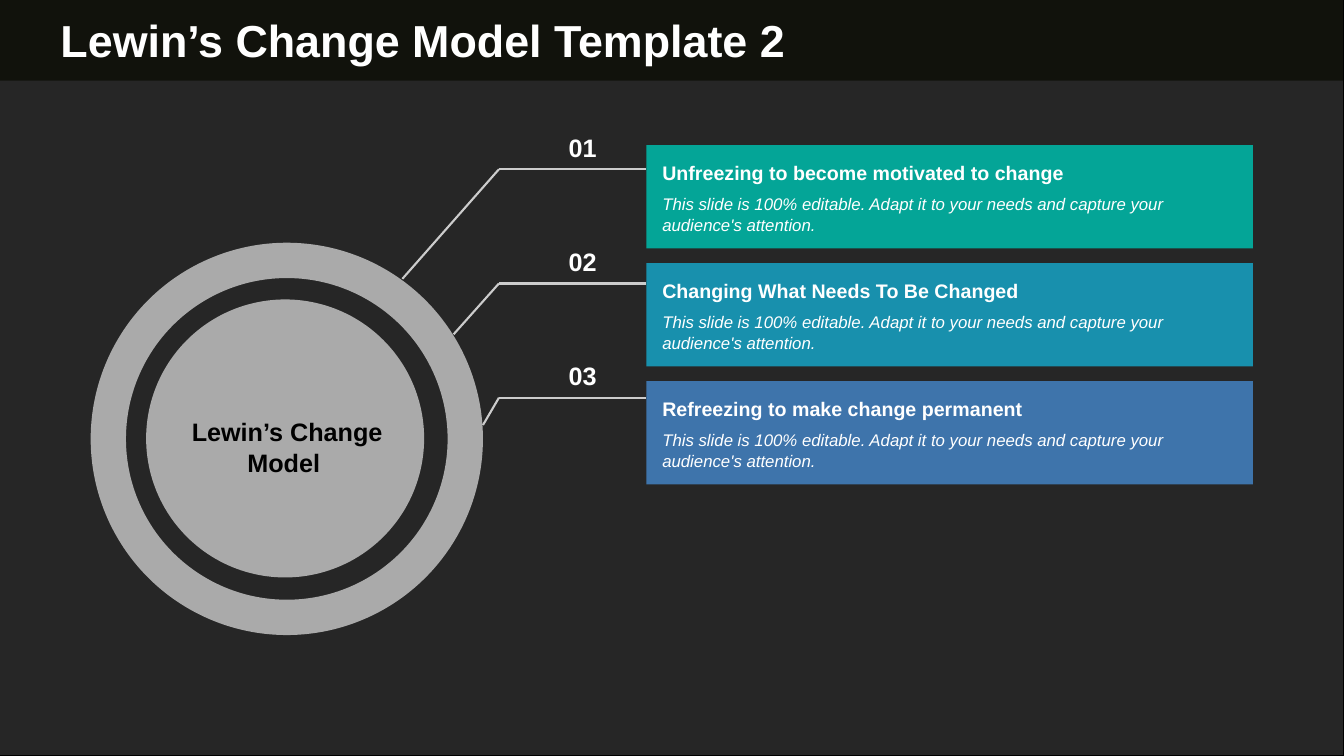
from dataclasses import dataclass

from lxml import etree
from pptx import Presentation
from pptx.dml.color import RGBColor
from pptx.enum.shapes import MSO_CONNECTOR, MSO_SHAPE
from pptx.enum.text import MSO_ANCHOR, MSO_AUTO_SIZE, PP_ALIGN
from pptx.oxml.ns import qn
from pptx.shapes.base import BaseShape
from pptx.slide import Slide
from pptx.text.text import TextFrame
from pptx.util import Inches, Pt

LINE = MSO_CONNECTOR.STRAIGHT
RECT, DONUT, OVAL = MSO_SHAPE.RECTANGLE, MSO_SHAPE.DONUT, MSO_SHAPE.OVAL
TOP, MID = MSO_ANCHOR.TOP, MSO_ANCHOR.MIDDLE
LEFT, CENTER = PP_ALIGN.LEFT, PP_ALIGN.CENTER
NO_FIT = MSO_AUTO_SIZE.NONE

COLS, ROWS = 160, 90
WIDE, HIGH = Inches(13.33), Inches(7.5)
WHITE, BLACK, GREY = "FFFFFF", "000000", "CCCCCC"
NOTE = ("This slide is 100% editable. Adapt it to your needs "
        "and capture your audience's attention.")


@dataclass(frozen=True)
class Area:
    col: float
    row: float
    wide: float
    high: float

    def place(self) -> tuple[int, int, int, int]:
        return across(self.col), down(self.row), across(self.wide), down(self.high)


@dataclass(frozen=True)
class Step:
    head: str
    fill: str
    end_col: float
    end_row: float


STEPS = [
    Step("Unfreezing to become motivated to change", "04A597", 47.9, 33.2),
    Step("Changing What Needs To Be Changed", "1890AD", 54, 39.8),
    Step("Refreezing to make change permanent", "3E74AB", 57.5, 50.6),
]
CARD = Area(76.95, 17.28, 72.2, 12.3)
CARD_GAP = 14.05
RAIL_ROW, RAIL_GAP = 20.15, 13.6
BEND = 59.4


def across(cols: float) -> int:
    return round(WIDE * cols / COLS)


def down(rows: float) -> int:
    return round(HIGH * rows / ROWS)


def color(code: str) -> RGBColor:
    return RGBColor.from_string(code)


def add_form(slide: Slide, kind: MSO_SHAPE, area: Area, fill: str,
             share: int = 100) -> BaseShape:
    form = slide.shapes.add_shape(kind, *area.place())
    form.shadow.inherit = False
    form.fill.solid()
    form.fill.fore_color.rgb = color(fill)
    form.line.fill.background()
    if share < 100:
        tint = form.element.spPr.find(qn("a:solidFill"))[0]
        etree.SubElement(tint, qn("a:alpha")).set("val", str(share * 1000))
    return form


def set_text(frame: TextFrame, text: str, size: int, ink: str = WHITE,
             bold: bool = True, align: PP_ALIGN = LEFT,
             anchor: MSO_ANCHOR = MID) -> None:
    frame.text = text
    frame.word_wrap = True
    frame.auto_size = NO_FIT
    frame.vertical_anchor = anchor
    line = frame.paragraphs[0]
    line.alignment = align
    font = line.runs[0].font
    font.name, font.size = "Arial", Pt(size)
    font.bold, font.italic = bold, not bold
    font.color.rgb = color(ink)


def add_text(slide: Slide, area: Area, text: str, size: int, ink: str = WHITE,
             bold: bool = True, align: PP_ALIGN = LEFT,
             anchor: MSO_ANCHOR = MID) -> None:
    frame = slide.shapes.add_textbox(*area.place()).text_frame
    frame.margin_left = frame.margin_right = Inches(0.07)
    frame.margin_top = frame.margin_bottom = Inches(0.04)
    set_text(frame, text, size, ink, bold, align, anchor)


def add_line(slide: Slide, col: float, row: float, end_col: float,
             end_row: float) -> None:
    line = slide.shapes.add_connector(
        LINE, across(col), down(row), across(end_col), down(end_row))
    line.line.color.rgb = color(GREY)
    line.line.width = Pt(1.5)
    etree.SubElement(line.element.spPr, qn("a:effectLst"))


def add_back(slide: Slide) -> None:
    add_form(slide, RECT, Area(0, 0, COLS, 9.6), "767C52")
    shade = add_form(slide, RECT, Area(0, 0, COLS, ROWS), BLACK, 85)
    shade.line.color.rgb = color(BLACK)
    shade.line.width = Pt(0.75)


def add_title(slide: Slide, text: str) -> None:
    title = slide.shapes.title
    title.element.getparent().append(title.element)
    title.left, title.top, title.width, title.height = Area(6, 0, 131.6, 9.4).place()
    set_text(title.text_frame, text, 32)


def add_wheel(slide: Slide) -> None:
    ring = add_form(slide, DONUT, Area(10.8, 28.9, 46.7, 46.7), WHITE, 61)
    ring.adjustments[0] = 0.09
    add_form(slide, OVAL, Area(17.4, 35.65, 33.1, 33.1), WHITE, 61)
    add_text(slide, Area(21.7, 49, 25, 8.4), "Lewin’s Change Model ", 18,
             BLACK, align=CENTER)


def add_step(slide: Slide, rank: int, step: Step) -> None:
    rail = RAIL_ROW + rank * RAIL_GAP
    add_text(slide, Area(66.85, rail - 5.6, 6.85, 6), f"{rank + 1:02}", 18)
    add_line(slide, BEND, rail, step.end_col, step.end_row)
    add_line(slide, BEND, rail, CARD.col, rail)
    top = CARD.row + rank * CARD_GAP
    add_form(slide, RECT, Area(CARD.col, top, CARD.wide, CARD.high), step.fill)
    add_text(slide, Area(78, top + 1.2, 61.6, 4.2), step.head, 14)
    add_text(slide, Area(78, top + 5.35, 61.6, 5.4), NOTE, 12,
             bold=False, anchor=TOP)


def main() -> None:
    deck = Presentation()
    deck.slide_width, deck.slide_height = WIDE, HIGH
    slide = deck.slides.add_slide(deck.slide_layouts[5])
    add_back(slide)
    add_title(slide, "Lewin’s Change Model Template 2")
    add_wheel(slide)
    for rank, step in enumerate(STEPS):
        add_step(slide, rank, step)
    deck.save("out.pptx")


if __name__ == "__main__":
    main()
